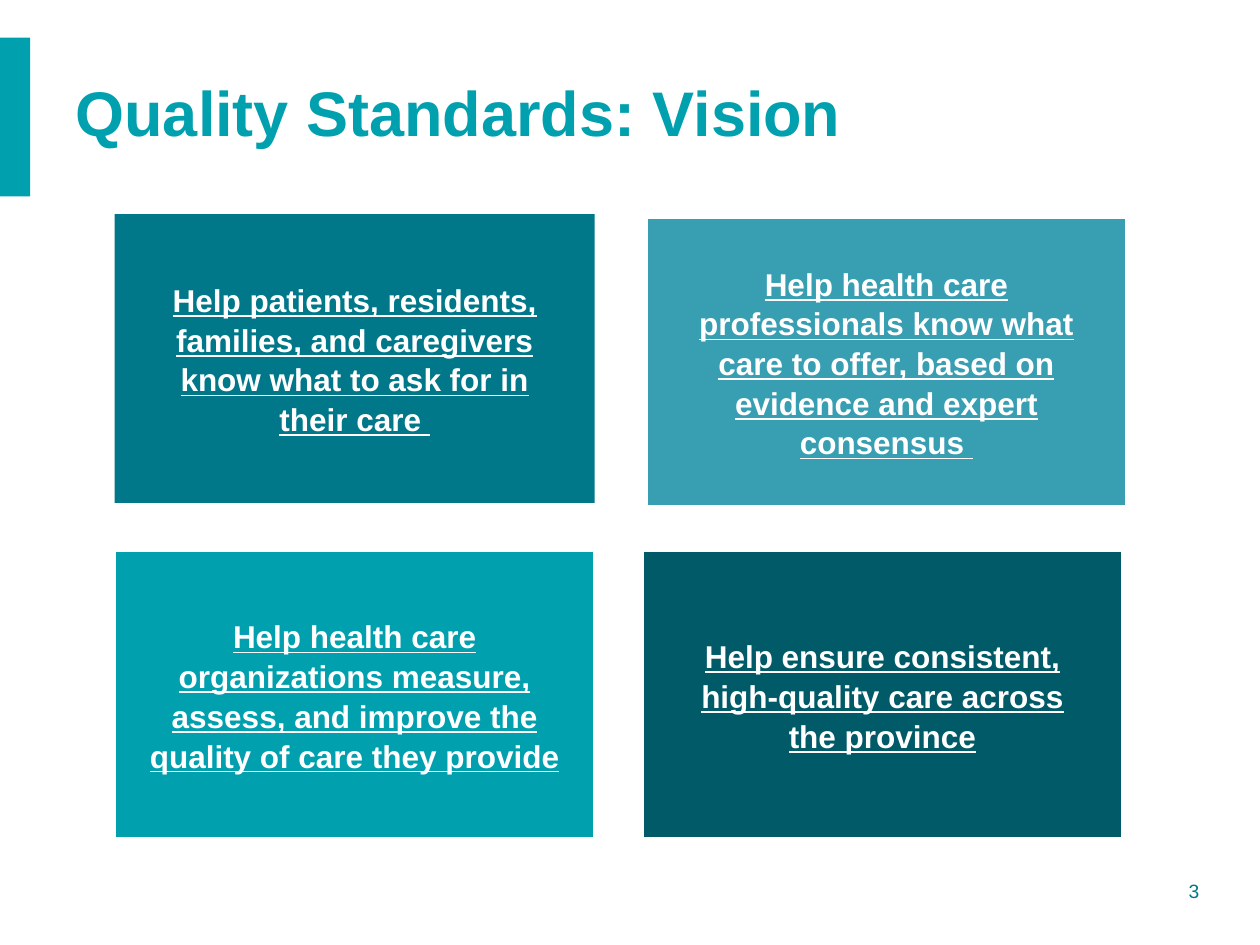
from dataclasses import dataclass

from pptx import Presentation
from pptx import util as u
from pptx.dml.color import RGBColor
from pptx.enum import shapes, text


@dataclass(frozen=True)
class Theme:
    font: str = "Arial"
    teal: str = "00A0AF"
    deep: str = "00788A"
    light: str = "389EB2"
    dark: str = "005A68"
    white: str = "FFFFFF"
    title_size: int = 36
    card_size: int = 18
    number_size: int = 11


T = Theme()
CARD_SIZE = (9.68, 5.82)
CARDS = [
    (2.31, 4.32, T.deep, False,
     ["Help patients, residents, families, and caregivers know what to ask for in their care "]),
    (13.03, 4.39, T.light, True,
     ["Help health care professionals know what care to offer, based on evidence and expert consensus",
      " "]),
    (2.31, 11.1, T.teal, True,
     ["Help health care organizations measure, assess, and improve the quality of care they provide"]),
    (12.95, 11.1, T.dark, True,
     ["Help ensure consistent, high-quality care across the province"]),
]


def cm(*values):
    return [u.Cm(v) for v in values]


def style_run(r, size, color, bold=False, underline=False):
    r.font.name = T.font
    r.font.size = u.Pt(size)
    r.font.bold = bold
    r.font.underline = underline
    r.font.color.rgb = RGBColor.from_string(color)


def add_rect(s, box, fill, outlined=False):
    sp = s.shapes.add_shape(shapes.MSO_SHAPE.RECTANGLE, *cm(*box))
    sp.shadow.inherit = False
    sp.fill.solid()
    sp.fill.fore_color.rgb = RGBColor.from_string(fill)
    if outlined:
        sp.line.color.rgb = RGBColor.from_string(T.white)
        sp.line.width = u.Pt(2)
    else:
        sp.line.fill.background()
    return sp


def set_title(s, title):
    sp = s.shapes.title
    sp.left, sp.top, sp.width, sp.height = cm(1.27, 1.27, 20.93, 1.96)
    tf = sp.text_frame
    tf.text = title
    tf.vertical_anchor = text.MSO_ANCHOR.MIDDLE
    p = tf.paragraphs[0]
    p.alignment = text.PP_ALIGN.LEFT
    style_run(p.runs[0], T.title_size, T.teal, bold=True)


def add_card(s, left, top, fill, outlined, parts):
    tf = add_rect(s, (left, top, *CARD_SIZE), fill, outlined).text_frame
    tf.word_wrap = True
    tf.vertical_anchor = text.MSO_ANCHOR.MIDDLE
    tf.margin_left = tf.margin_right = u.Cm(0.71)
    tf.margin_top = tf.margin_bottom = u.Cm(0.18)
    p = tf.paragraphs[0]
    p.alignment = text.PP_ALIGN.CENTER
    p.line_spacing = 1.05
    for i, part in enumerate(parts):
        r = p.add_run()
        r.text = part
        style_run(r, T.card_size, T.white, bold=i == 0, underline=True)


def add_number(s, number):
    tf = s.shapes.add_textbox(*cm(21.46, 17.6, 2.97, 0.74)).text_frame
    tf.word_wrap = True
    tf.text = number
    p = tf.paragraphs[0]
    p.alignment = text.PP_ALIGN.RIGHT
    style_run(p.runs[0], T.number_size, T.deep)


def main():
    prs = Presentation()
    prs.slide_width, prs.slide_height = cm(25.4, 19.05)
    s = prs.slides.add_slide(prs.slide_layouts[5])
    add_number(s, "3")
    add_rect(s, (0, 0.76, 0.61, 3.2), T.teal)
    set_title(s, "Quality Standards: Vision")
    for card in CARDS:
        add_card(s, *card)
    prs.save("out.pptx")


if __name__ == "__main__":
    main()
